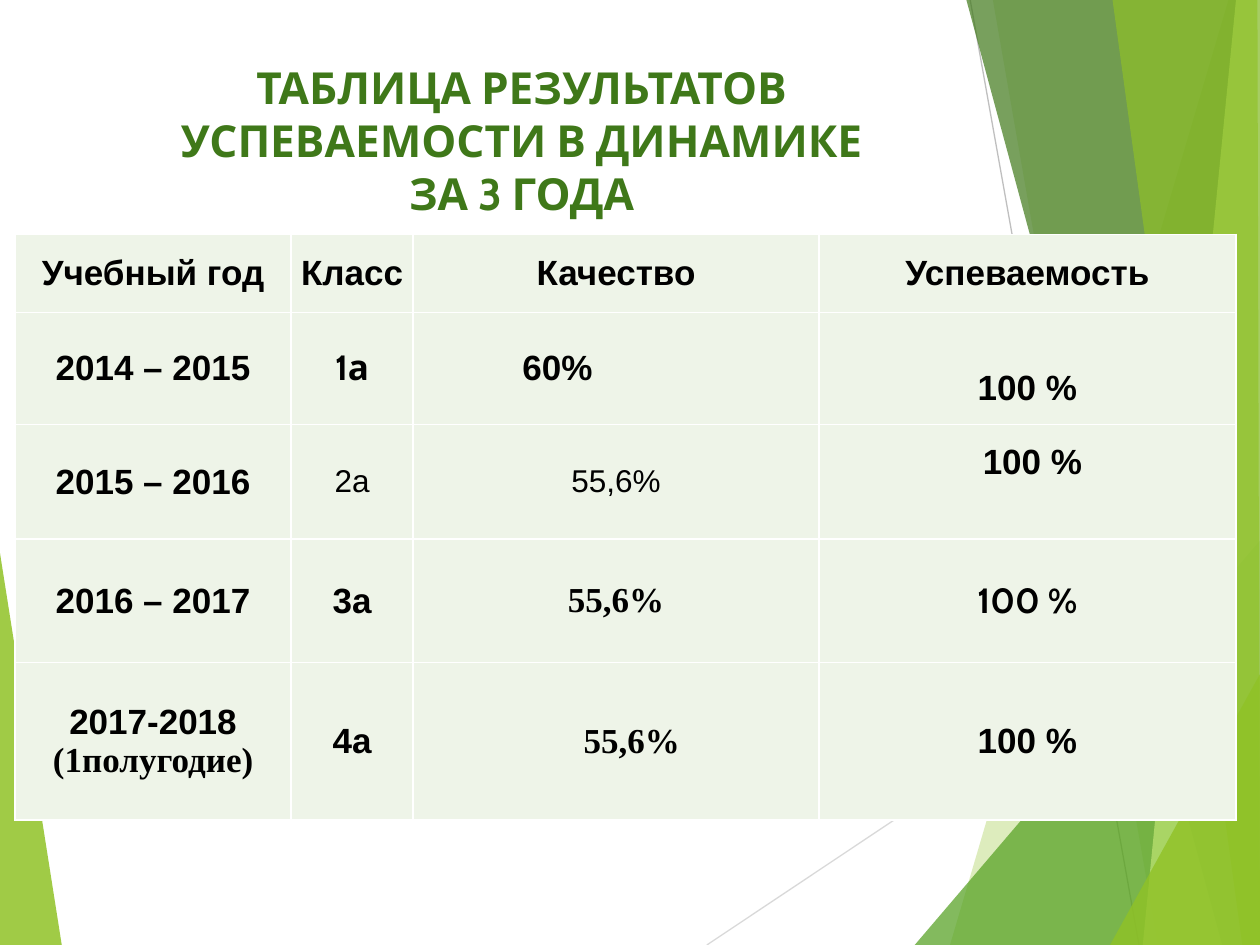
from lxml.etree import SubElement as Sub
from pptx import Presentation
from pptx.dml.color import RGBColor as Rgb
from pptx.enum.shapes import MSO_CONNECTOR as Link
from pptx.enum.text import MSO_ANCHOR as Anchor, MSO_AUTO_SIZE as Fit, PP_ALIGN as Align
from pptx.oxml.ns import qn
from pptx.util import Inches, Pt

HUES = {
    "lime": "90C226", "leaf": "54A021", "dark": "3F7819", "pale": "C0E474",
    "cell": "EEF4E8", "white": "FFFFFF", "black": "000000",
    "mist": "D9D9D9", "gray": "BFBFBF",
}
SIDES = ("left", "right", "top", "bottom")


class Deck:
    font = "Arial"
    size = 20
    pads = {"left": 0.07, "right": 0.07, "top": 0, "bottom": 0}

    def __init__(self):
        self.file = Presentation()
        self.file.slide_width = Inches(10)
        self.file.slide_height = Inches(7.5)
        self.slide = self.file.slides.add_slide(self.file.slide_layouts[5])
        self.shapes = self.slide.shapes

    def hue(self, name):
        return Rgb.from_string(HUES[name])

    def paint(self, fill, name):
        fill.solid()
        fill.fore_color.rgb = self.hue(name)

    def style(self, para, font, size, name, bold=True):
        para.alignment = Align.CENTER
        para.font.name = font
        para.font.size = Pt(size)
        para.font.bold = bold
        para.font.color.rgb = self.hue(name)

    def facet(self, name, alpha, points):
        spots = [(Inches(x), Inches(y)) for x, y in points]
        pen = self.shapes.build_freeform(*spots[0])
        pen.add_line_segments(spots[1:], close=True)
        shape = pen.convert_to_shape()
        shape.shadow.inherit = False
        shape.line.fill.background()
        self.paint(shape.fill, name)
        color = shape.element.spPr.find(qn("a:solidFill"))[0]
        Sub(color, qn("a:alpha"), val=str(alpha * 1000))

    def line(self, name, *ends):
        line = self.shapes.add_connector(Link.STRAIGHT, *map(Inches, ends))
        line.line.color.rgb = self.hue(name)
        line.line.width = Pt(0.75)
        Sub(line.element.spPr, qn("a:effectLst"))

    def title(self, text, left, top, width, height):
        box = self.shapes.title
        self.shapes.element.append(box.element)
        box.left, box.top = Inches(left), Inches(top)
        box.width, box.height = Inches(width), Inches(height)
        frame = box.text_frame
        frame.text = text
        frame.word_wrap = True
        frame.auto_size = Fit.NONE
        frame.vertical_anchor = Anchor.TOP
        frame.margin_top = Inches(0.48)
        self.style(frame.paragraphs[0], "Cabin", 25.2, "dark")

    def border(self, cell):
        props = cell._tc.get_or_add_tcPr()
        for side in "LRTB":
            edge = Sub(props, qn(f"a:ln{side}"), w=str(Pt(1)))
            fill = Sub(edge, qn("a:solidFill"))
            Sub(fill, qn("a:srgbClr"), val=HUES["white"])

    def cell(self, cell, text, fonts=(), size=size, bold=True, **pads):
        self.border(cell)
        self.paint(cell.fill, "cell")
        cell.vertical_anchor = Anchor.MIDDLE
        for side in SIDES:
            pad = self.pads[side] + pads.get(side, 0)
            setattr(cell, f"margin_{side}", Inches(pad))
        cell.text = text
        paras = cell.text_frame.paragraphs
        for para, font in zip(paras, fonts or [self.font] * len(paras)):
            self.style(para, font, size, "black", bold)

    def table(self, left, top, cols, rows, data, looks):
        area = map(Inches, (left, top, sum(cols), sum(rows)))
        table = self.shapes.add_table(len(rows), len(cols), *area).table
        table.first_row = table.horz_banding = False
        for col, width in zip(table.columns, cols):
            col.width = Inches(width)
        for row, height in zip(table.rows, rows):
            row.height = Inches(height)
        for r, texts in enumerate(data):
            for c, text in enumerate(texts):
                self.cell(table.cell(r, c), text, **looks.get((r, c), {}))


def main():
    deck = Deck()
    deck.facet("lime", 85, [(0, 4.39), (0.49, 7.5), (0, 7.5)])
    deck.line("mist", 5.61, 7.5, 10, 4.57)
    deck.line("gray", 7.7, 0, 9.04, 7.5)
    for name, alpha, points in [
        ("lime", 30, [(9.75, 0), (7.54, 7.5), (10, 7.5), (10, 0)]),
        ("lime", 20, [(7.88, 0), (9.19, 7.5), (10, 7.5), (10, 0)]),
        ("leaf", 72, [(7.26, 7.5), (10, 4.29), (10, 7.5)]),
        ("dark", 70, [(7.67, 0), (9.7, 7.5), (10, 7.5), (10, 0)]),
        ("pale", 70, [(9.81, 0), (9.07, 7.5), (10, 7.5), (10, 0)]),
        ("lime", 65, [(8.83, 0), (9.86, 7.5), (10, 7.5), (9.98, 0)]),
        ("lime", 80, [(8.81, 7.5), (10, 5.35), (10, 7.5)]),
    ]:
        deck.facet(name, alpha, points)

    deck.title("ТАБЛИЦА РЕЗУЛЬТАТОВ УСПЕВАЕМОСТИ В ДИНАМИКЕ\vЗА 3 ГОДА",
               0.67, 0, 6.94, 1.44)

    data = [
        ("Учебный год", "Класс", "Качество", "Успеваемость"),
        ("2014 – 2015", "1а", "60%", "100 %"),
        ("2015 – 2016", "2а", "55,6%", "100 %"),
        ("2016 – 2017", "3а", "55,6%", "100 %"),
        ("2017-2018\n(1полугодие)", "4а", "55,6%", "100 %"),
    ]
    cabin, times = ["Cabin"], ["Times New Roman"]
    plain = {"size": 18, "bold": False}
    looks = {
        (1, 1): {"fonts": cabin},
        (1, 2): {"right": 0.93},
        (1, 3): {"top": 0.31},
        (2, 1): plain,
        (2, 2): plain,
        (2, 3): {"bottom": 0.31, "left": 0.08},
        (3, 2): {"fonts": times},
        (3, 3): {"fonts": cabin},
        (4, 0): {"fonts": [deck.font, *times]},
        (4, 2): {"fonts": times, "left": 0.25},
    }
    deck.table(0.12, 1.86, (2.19, 0.97, 3.22, 3.31),
               (0.62, 0.89, 0.91, 0.98, 1.25), data, looks)
    deck.file.save("out.pptx")


if __name__ == "__main__":
    main()
